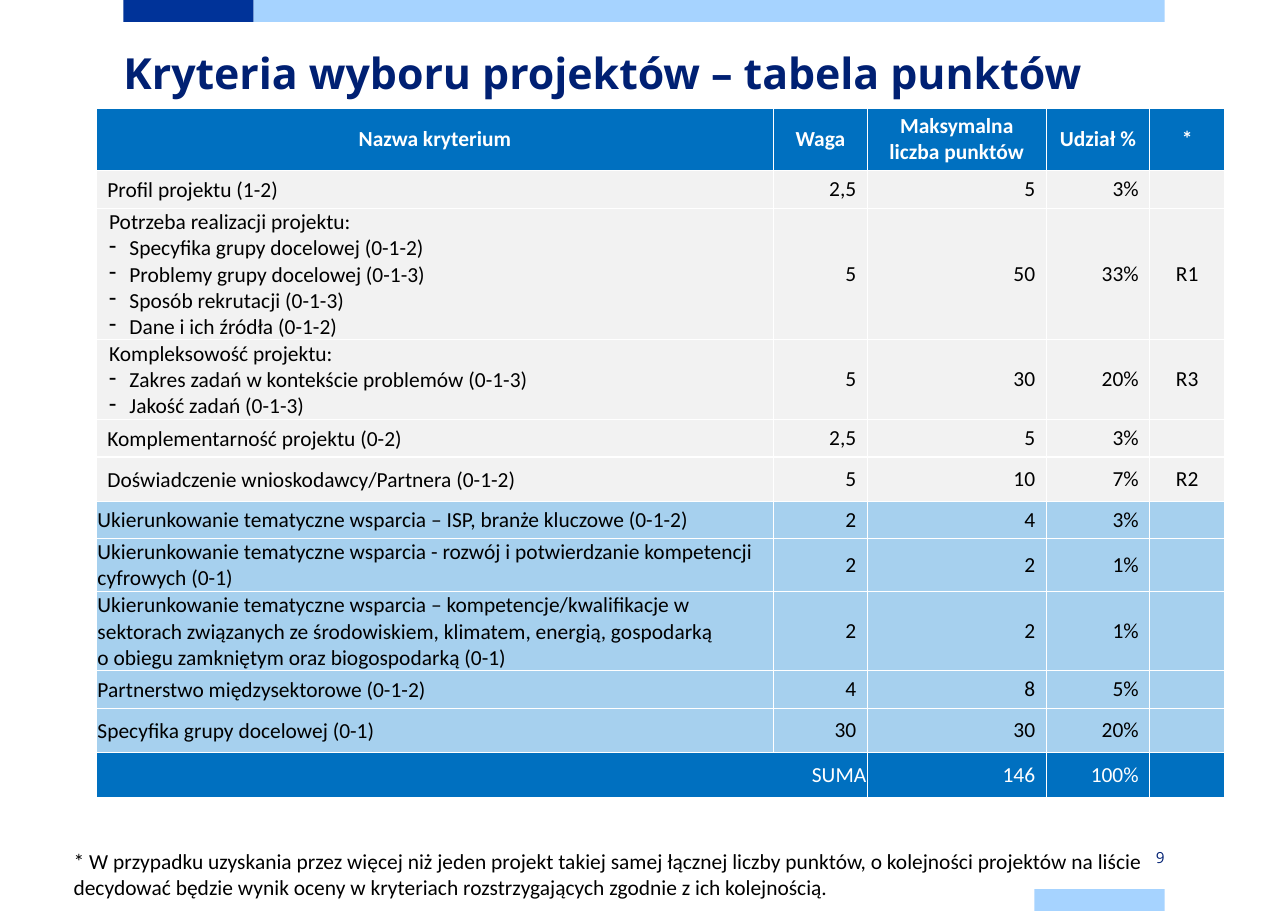
from lxml import etree
from pptx import Presentation
from pptx.dml.color import RGBColor
from pptx.enum import shapes, text
from pptx.oxml.ns import qn
from pptx.util import Pt

NAVY = RGBColor(0x00, 0x20, 0x73)
EU_BLUE = RGBColor(0x00, 0x33, 0x99)
SKY = RGBColor(0xA6, 0xD3, 0xFF)
HEADER_BLUE = RGBColor(0x00, 0x70, 0xC0)
BONUS_BLUE = RGBColor(0xA6, 0xD0, 0xEE)
GREY = RGBColor(0xF2, 0xF2, 0xF2)
WHITE = RGBColor(0xFF, 0xFF, 0xFF)
BLACK = RGBColor(0x00, 0x00, 0x00)
LEFT, CENTER, RIGHT = text.PP_ALIGN.LEFT, text.PP_ALIGN.CENTER, text.PP_ALIGN.RIGHT
MIDDLE = text.MSO_ANCHOR.MIDDLE


def write(paragraph, content, align=LEFT, name="Calibri", size=14, color=BLACK, bold=False):
    """Fill a paragraph; line breaks and empty paragraphs get the text size too."""
    paragraph.text = content
    paragraph.alignment = align
    for run in paragraph.runs:
        run.font.color.rgb = color
        for key, value in {"name": name, "size": Pt(size), "bold": bold}.items():
            setattr(run.font, key, value)
    for line_break in paragraph._p.findall(qn("a:br")):
        etree.SubElement(line_break, qn("a:rPr")).set("sz", str(size * 100))
    if not content:
        etree.SubElement(paragraph._p, qn("a:endParaRPr")).set("sz", str(size * 100))


def indent(paragraph, margin, first_line=0, bullet=None):
    properties = paragraph._p.get_or_add_pPr()
    properties.set("marL", str(Pt(margin)))
    properties.set("indent", str(Pt(first_line)))
    if bullet:
        etree.SubElement(properties, qn("a:buChar")).set("char", bullet)


prs = Presentation()
prs.slide_width, prs.slide_height = Pt(841.68), Pt(595.44)
slide = prs.slides.add_slide(prs.slide_layouts[5])

# Colour bars at the top and bottom edges
for left, top, width, color in [(80.7, 0, 85, EU_BLUE), (165.7, 0, 595.3, SKY),
                                (676, 581.1, 85, SKY)]:
    bar = slide.shapes.add_shape(shapes.MSO_SHAPE.RECTANGLE,
                                 Pt(left), Pt(top), Pt(width), Pt(14.3))
    bar.shadow.inherit = False
    bar.fill.solid()
    bar.fill.fore_color.rgb = color
    bar.line.fill.background()

page_number = slide.shapes.add_textbox(Pt(676), Pt(553), Pt(85), Pt(14.2))
page_format = {"margin_left": 0, "margin_right": Pt(0), "margin_top": Pt(5.7),
               "margin_bottom": Pt(5.7), "vertical_anchor": MIDDLE, "word_wrap": True}
for key, value in page_format.items():
    setattr(page_number.text_frame, key, value)
write(page_number.text_frame.paragraphs[0], "9", RIGHT, "Open Sans", 10, NAVY)

title = slide.shapes.title
for key, value in {"left": 80.7, "top": 28.1, "width": 680.4, "height": 51.1}.items():
    setattr(title, key, Pt(value))
title_format = {"margin_left": 0, "margin_right": 0, "margin_top": 0, "margin_bottom": 0,
                "vertical_anchor": text.MSO_ANCHOR.TOP, "word_wrap": True,
                "auto_size": text.MSO_AUTO_SIZE.NONE}
for key, value in title_format.items():
    setattr(title.text_frame, key, value)
heading = title.text_frame.paragraphs[0]
write(heading, "Kryteria wyboru projektów – tabela punktów", LEFT, "Open Sans", 28, NAVY, True)
heading.line_spacing = Pt(36)

# Criteria: row height, fill, then the five cells; a list is a heading with dashed items
needs = ["Potrzeba realizacji projektu:", "Specyfika grupy docelowej (0-1-2)",
         "Problemy grupy docelowej (0-1-3)", "Sposób rekrutacji (0-1-3)",
         "Dane i ich źródła (0-1-2)"]
scope = ["Kompleksowość projektu:", "Zakres zadań w kontekście problemów (0-1-3)",
         "Jakość zadań (0-1-3)"]
digital = ("Ukierunkowanie tematyczne wsparcia - rozwój i potwierdzanie kompetencji "
           "cyfrowych (0-1)")
green = ("Ukierunkowanie tematyczne wsparcia – kompetencje/kwalifikacje w sektorach "
         "związanych ze środowiskiem, klimatem, energią, gospodarką \n"
         "o obiegu zamkniętym oraz biogospodarką (0-1)")
criteria = [
    (40.5, HEADER_BLUE, ["Nazwa kryterium", "Waga", "Maksymalna liczba punktów", "Udział %", "*"]),
    (24.8, GREY, ["Profil projektu (1-2)", "2,5", "5", "3%", ""]),
    (85.9, GREY, [needs, "5", "50", "33%", "R1"]),
    (51.9, GREY, [scope, "5", "30", "20%", "R3"]),
    (24.8, GREY, ["Komplementarność projektu (0-2)", "2,5", "5", "3%", ""]),
    (28.8, GREY, ["Doświadczenie wnioskodawcy/Partnera (0-1-2)", "5", "10", "7%", "R2"]),
    (24.3, BONUS_BLUE, ["Ukierunkowanie tematyczne wsparcia – ISP, branże kluczowe (0-1-2)",
                        "2", "4", "3%", ""]),
    (34.8, BONUS_BLUE, [digital, "2", "2", "1%", ""]),
    (51.8, BONUS_BLUE, [green, "2", "2", "1%", ""]),
    (24.5, BONUS_BLUE, ["Partnerstwo międzysektorowe (0-1-2)", "4", "8", "5%", ""]),
    (28.8, BONUS_BLUE, ["Specyfika grupy docelowej (0-1)", "30", "30", "20%", ""]),
    (29.4, HEADER_BLUE, ["SUMA", "", "146", "100%", ""]),
]
column_widths = [442.5, 61.3, 116.9, 67.7, 48.9]
last = len(criteria) - 1

table = slide.shapes.add_table(len(criteria), len(column_widths), Pt(63), Pt(70.6),
                               Pt(sum(column_widths)),
                               Pt(sum(height for height, _, _ in criteria))).table
table.horz_banding = False
for column, width in zip(table.columns, column_widths):
    column.width = Pt(width)
table.cell(last, 0).merge(table.cell(last, 1))

for row, (height, fill, values) in enumerate(criteria):
    table.rows[row].height = Pt(height)
    color = WHITE if fill == HEADER_BLUE else BLACK
    for col, value in enumerate(values):
        cell = table.cell(row, col)
        cell.fill.solid()
        cell.fill.fore_color.rgb = fill
        cell.vertical_anchor = MIDDLE
        if row == 0 or col == 4:
            align = CENTER
        else:
            align = RIGHT if col or row == last else LEFT
        if row and col == 0:
            for side, margin in {"left": 0.7, "right": 0.7, "top": 0.7, "bottom": 0}.items():
                setattr(cell, f"margin_{side}", Pt(margin))
        items = value if isinstance(value, list) else [value]
        for number, item in enumerate(items):
            frame = cell.text_frame
            paragraph = frame.add_paragraph() if number else frame.paragraphs[0]
            if len(items) > 1:
                indent(paragraph, 20.9, -13.3, "-" if number else None)
            elif row and col == 0 and fill != BONUS_BLUE:
                indent(paragraph, 6.5)
            write(paragraph, item, align, color=color, bold=row == 0)

footnote = slide.shapes.add_textbox(Pt(41), Pt(550.8), Pt(738), Pt(41.2))
footnote.text_frame.word_wrap = True
write(footnote.text_frame.paragraphs[0],
      "* W przypadku uzyskania przez więcej niż jeden projekt takiej samej łącznej liczby "
      "punktów, o kolejności projektów na liście decydować będzie wynik oceny w kryteriach "
      "rozstrzygających zgodnie z ich kolejnością.")

prs.save("out.pptx")
